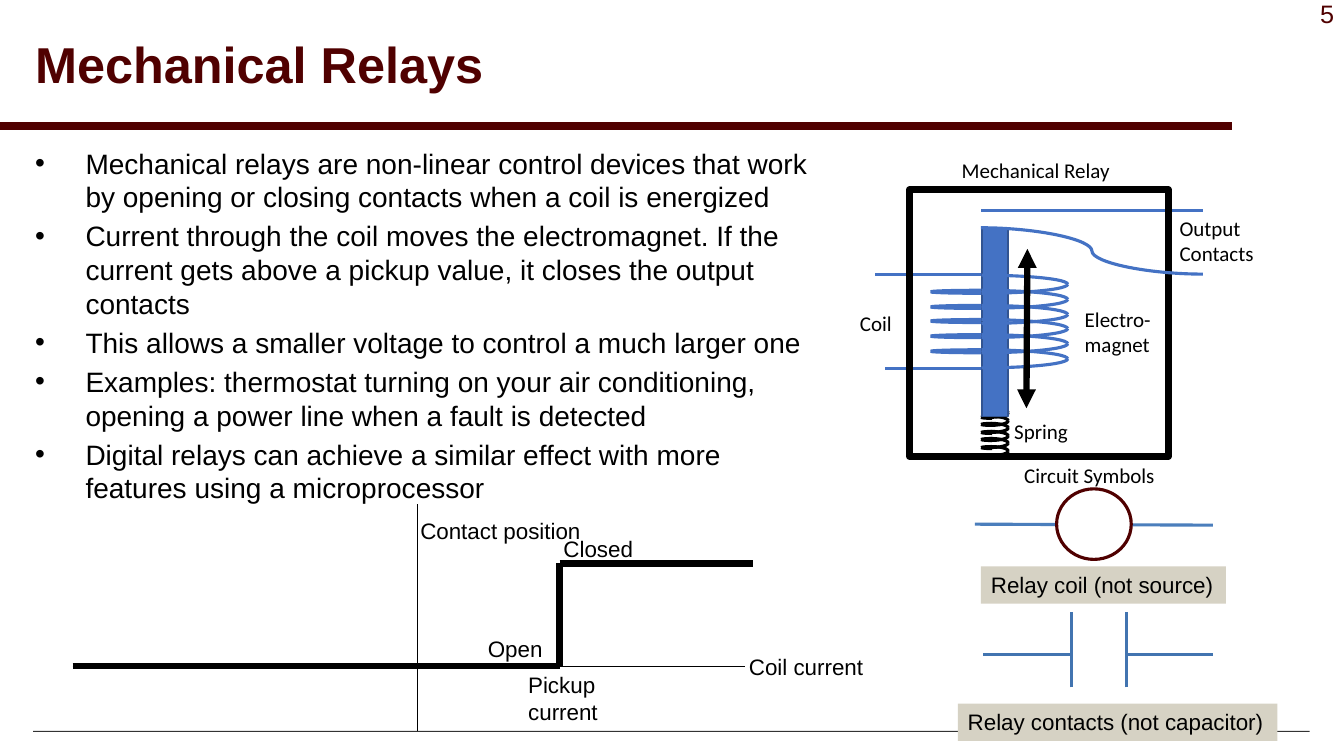
from lxml.etree import SubElement
from pptx import Presentation
from pptx.dml.color import RGBColor
from pptx.enum.shapes import MSO_CONNECTOR as Wire, MSO_SHAPE as Form
from pptx.enum.text import MSO_ANCHOR as Anchor, PP_ALIGN as Align
from pptx.oxml.ns import qn
from pptx.util import Emu, Pt

PX = 9144
MAROON = RGBColor(0x50, 0x00, 0x00)
BLACK = RGBColor(0x00, 0x00, 0x00)
WHITE = RGBColor(0xFF, 0xFF, 0xFF)
GRAY = RGBColor(0x33, 0x33, 0x33)
SAND = RGBColor(0xD6, 0xD2, 0xC4)
BLUE = RGBColor(0x44, 0x72, 0xC4)
NAVY = RGBColor(0x32, 0x54, 0x91)
STEEL = RGBColor(0x42, 0x74, 0xB0)
SKY = RGBColor(0x4B, 0x7E, 0xBC)

POINTS = [
    "Mechanical relays are non-linear control devices that work by opening or closing contacts when a coil is energized",
    "Current through the coil moves the electromagnet. If the current gets above a pickup value, it closes the output contacts",
    "This allows a smaller voltage to control a much larger one",
    "Examples: thermostat turning on your air conditioning, opening a power line when a fault is detected",
    "Digital relays can achieve a similar effect with more features using a microprocessor",
]


def px(*vals):
    return [Emu(v * PX) for v in vals]


def bullet(para):
    props = para._p.get_or_add_pPr()
    props.set("marL", str(50 * PX))
    props.set("indent", str(-50 * PX))
    tint = SubElement(props, qn("a:buClr"))
    SubElement(tint, qn("a:srgbClr")).set("val", str(BLACK))
    SubElement(props, qn("a:buFont")).set("typeface", "Arial")
    SubElement(props, qn("a:buChar")).set("char", "•")


def text(slide, words, box, size=16, font="Arial", color=BLACK, bold=False,
         wrap=True, fill=None, align=Align.LEFT, anchor=Anchor.TOP,
         leading=None, dots=False):
    shape = slide.shapes.add_textbox(*px(*box))
    if fill is not None:
        shape.fill.solid()
        shape.fill.fore_color.rgb = fill
    frame = shape.text_frame
    frame.word_wrap = wrap
    frame.vertical_anchor = anchor
    for i, line in enumerate([words] if isinstance(words, str) else words):
        para = frame.add_paragraph() if i else frame.paragraphs[0]
        if dots:
            bullet(para)
        para.alignment = align
        if leading:
            para.line_spacing = leading
        if i:
            para.space_before = Pt(size * 0.2)
        run = para.add_run()
        run.text = line
        run.font.name = font
        run.font.size = Pt(size)
        run.font.bold = bold
        run.font.color.rgb = color


def form(slide, kind, box, fill=None, color=None, width=2.25, turn=0, flip=False):
    shape = slide.shapes.add_shape(kind, *px(*box))
    shape.shadow.inherit = False
    shape.rotation = turn
    if flip:
        shape._element.spPr.find(qn("a:xfrm")).set("flipV", "1")
    if fill is None:
        shape.fill.background()
    else:
        shape.fill.solid()
        shape.fill.fore_color.rgb = fill
    if color is None:
        shape.line.fill.background()
    else:
        shape.line.color.rgb = color
        shape.line.width = Pt(width)


def wire(slide, ends, color=BLACK, width=2.25, kind=Wire.STRAIGHT, heads=False):
    link = slide.shapes.add_connector(kind, *px(*ends))
    link.line.color.rgb = color
    link.line.width = Pt(width)
    if heads:
        for tag in ("a:headEnd", "a:tailEnd"):
            SubElement(link.line._get_or_add_ln(), qn(tag)).set("type", "triangle")
    SubElement(link._element.spPr, qn("a:effectLst"))


def loop(slide, box, color, turn=0):
    for flip in (False, True):
        form(slide, Form.ARC, box, color=color, turn=turn, flip=flip)


def header(slide):
    form(slide, Form.RECTANGLE, (33, 725, 1266, 1), fill=GRAY)
    wire(slide, (0, 125, 1222, 125), MAROON, 6)
    text(slide, "5", (1213, -7, 120, 40), size=18, color=MAROON, align=Align.RIGHT)
    text(slide, "Mechanical Relays", (25, 8, 1192, 117), size=36, color=MAROON,
         bold=True, anchor=Anchor.MIDDLE, leading=0.9)
    text(slide, POINTS, (25, 140, 790, 568), size=20, dots=True)


def spring(slide):
    for i in range(6):
        top = 443 - round(i * 7.6)
        loop(slide, (965, top, 35, 9), BLACK)
        if i < 5:
            loop(slide, (973, top, 22, 2), BLACK, turn=180)


def relay(slide):
    spring(slide)
    tops = [347 - round(i * 14.8) for i in range(5)]
    for top in tops:
        loop(slide, (923, top, 105, 3), BLUE, turn=180)
    wire(slide, (973, 366, 878, 366), BLUE)
    wire(slide, (868, 272, 975, 272), BLUE)
    form(slide, Form.RECTANGLE, (974, 227, 26, 186), BLUE, NAVY, 1)
    for top in tops + [273]:
        loop(slide, (888, top, 171, 18), BLUE)
    wire(slide, (973, 209, 1193, 209), BLUE)
    wire(slide, (1019, 247, 1018, 405), width=4.5, heads=True)
    form(slide, Form.RECTANGLE, (902, 188, 257, 265), color=BLACK, width=4.5)
    wire(slide, (973, 226, 1193, 272), BLUE, kind=Wire.CURVE)
    text(slide, "Coil", (843, 303, 66, 37), size=15, font="Calibri", wrap=False)
    for words, box in (
        ("Output Contacts", (1160, 209, 119, 64)),
        ("Spring", (996, 410, 75, 64)),
        ("Electro-magnet", (1066, 299, 92, 118)),
        ("Mechanical Relay", (944, 151, 206, 64)),
        ("Circuit Symbols", (1006, 454, 206, 35)),
    ):
        text(slide, words, box, size=15, font="Calibri")


def symbols(slide):
    for x in (1117, 1063):
        wire(slide, (x, 682, x, 607), STEEL)
    for x in (1117, 975):
        wire(slide, (x, 649, x + 86, 649), STEEL)
    wire(slide, (967, 520, 1203, 521), SKY)
    form(slide, Form.OVAL, (1048, 485, 74, 70), WHITE, MAROON)
    text(slide, "Relay coil (not source)", (973, 562, 243, 37), wrap=False, fill=SAND)
    text(slide, "Relay contacts (not capacitor)", (950, 698, 317, 37),
         wrap=False, fill=SAND)


def graph(slide):
    wire(slide, (72, 661, 739, 661), width=0.75)
    wire(slide, (414, 500, 414, 725), width=0.75)
    for ends in ((72, 661, 555, 661), (555, 559, 747, 559), (555, 559, 555, 662)):
        wire(slide, ends, width=4.5)
    text(slide, "Coil current", (733, 643, 135, 37), wrap=False)
    text(slide, "Contact position", (407, 508, 181, 37), wrap=False)
    text(slide, "Pickup current", (514, 661, 102, 64))
    text(slide, "Closed", (549, 526, 102, 37))
    text(slide, "Open", (474, 625, 102, 37))


def main():
    """Build the mechanical relays slide."""
    deck = Presentation()
    deck.slide_width, deck.slide_height = px(1333, 750)
    slide = deck.slides.add_slide(deck.slide_layouts[6])
    for part in (header, relay, symbols, graph):
        part(slide)
    deck.save("out.pptx")


if __name__ == "__main__":
    main()
